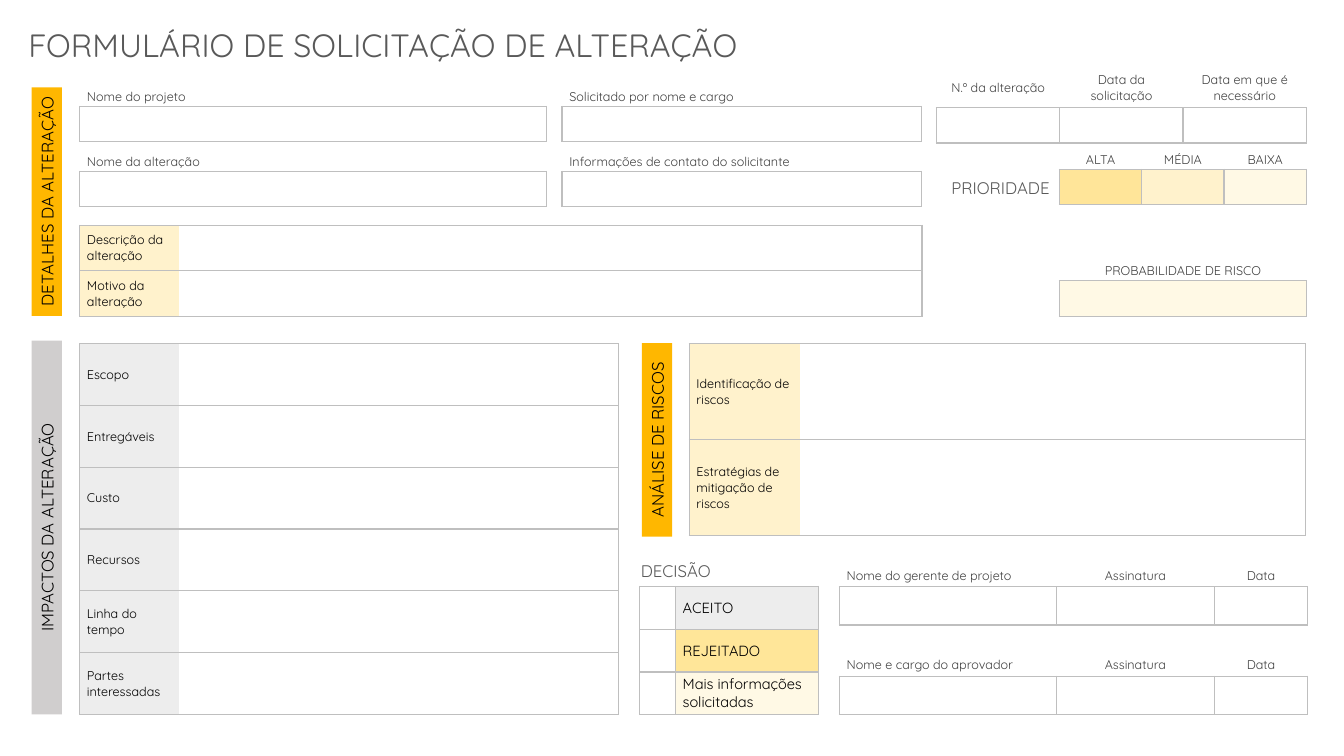
"""Builds a one-slide change request form."""
import lxml.etree
import pptx
import pptx.dml.color
import pptx.enum.shapes
import pptx.enum.text
import pptx.oxml.ns
import pptx.util

Pt = pptx.util.Pt
RGBColor = pptx.dml.color.RGBColor
PP_ALIGN = pptx.enum.text.PP_ALIGN
MSO_ANCHOR = pptx.enum.text.MSO_ANCHOR

FONT = "Quicksand"
BLACK = RGBColor(0x00, 0x00, 0x00)
WHITE = RGBColor(0xFF, 0xFF, 0xFF)
DARK = RGBColor(0x40, 0x40, 0x40)
GRAY = RGBColor(0x59, 0x59, 0x59)
BORDER = RGBColor(0xBF, 0xBF, 0xBF)
AMBER = RGBColor(0xFF, 0xB7, 0x00)
SILVER = RGBColor(0xD0, 0xCE, 0xCE)
PALE_GRAY = RGBColor(0xED, 0xED, 0xED)
GOLD = RGBColor(0xFF, 0xE5, 0x99)
REJECTED_GOLD = RGBColor(0xFF, 0xE6, 0x99)
CREAM = RGBColor(0xFF, 0xF2, 0xCC)
IVORY = RGBColor(0xFF, 0xF9, 0xE5)

LEFT, CENTER, RIGHT = PP_ALIGN.LEFT, PP_ALIGN.CENTER, PP_ALIGN.RIGHT
BAR_THICKNESS = 21.6
SIDES = {"l": "a:lnL", "r": "a:lnR", "t": "a:lnT", "b": "a:lnB"}

TITLE = "FORMULÁRIO DE SOLICITAÇÃO DE ALTERAÇÃO"
HEADINGS = [
    ("PRIORIDADE", 668.9, 121, 88, RIGHT),
    ("DECISÃO", 450.7, 394.6, 124.6, LEFT),
]
BARS = [
    ("DETALHES DA ALTERAÇÃO", 33.5, 144, 163.4, AMBER),
    ("IMPACTOS DA ALTERAÇÃO", 33.5, 376.8, 267.1, SILVER),
    ("ANÁLISE DE RISCOS", 469.4, 314.2, 138.2, AMBER),
]
SIGNATURE_COLUMNS = [("Assinatura", 113.2, CENTER, WHITE), ("Data", 66.3, CENTER, WHITE)]
FIELDS = [
    (56.9, 61.7, 14.4, 25.2, [("Nome do projeto", 333.6, LEFT, WHITE)]),
    (56.9, 108, 14.4, 25.2, [("Nome da alteração", 333.6, LEFT, WHITE)]),
    (401.5, 61.7, 14.4, 25.2, [("Solicitado por nome e cargo", 256.8, LEFT, WHITE)]),
    (401.5, 108, 14.4, 25.2, [("Informações de contato do solicitante", 256.8, LEFT, WHITE)]),
    (668.9, 51.5, 25.4, 25.2, [
        (label, 88.1, CENTER, WHITE)
        for label in ("N.º da alteração", "Data da solicitação", "Data em que é necessário")]),
    (756.7, 106.6, 14.4, 25.2, [
        (label, 58.8, CENTER, fill)
        for label, fill in (("ALTA", GOLD), ("MÉDIA", CREAM), ("BAIXA", IVORY))]),
    (756.7, 186.2, 14.4, 25.2, [("PROBABILIDADE DE RISCO", 176.4, CENTER, IVORY)]),
    (599.6, 403.3, 15.8, 27.4,
     [("Nome do gerente de projeto", 154.8, LEFT, WHITE)] + SIGNATURE_COLUMNS),
    (599.6, 467.2, 15.8, 27.4,
     [("Nome e cargo do aprovador", 154.8, LEFT, WHITE)] + SIGNATURE_COLUMNS),
]
SECTIONS = [
    (56.9, 245.5, (70.9, 314.1), 44.16, PALE_GRAY,
     ["Escopo", "Entregáveis", "Custo", "Recursos", "Linha do tempo", "Partes interessadas"]),
    (56.9, 161, (70.9, 530.8), 32.4, CREAM, ["Descrição da alteração", "Motivo da alteração"]),
    (492.3, 245.5, (79.5, 360.9), 68.6, CREAM,
     ["Identificação de riscos", "Estratégias de mitigação de riscos"]),
]
DECISIONS = [("ACEITO", PALE_GRAY), ("REJEITADO", REJECTED_GOLD),
             ("Mais informações solicitadas", IVORY)]


def set_text(frame, text, size, color, alignment, spacing=None):
    frame.word_wrap = True
    paragraph = frame.paragraphs[0]
    paragraph.text = text
    paragraph.alignment = alignment
    if spacing:
        paragraph.line_spacing = spacing
    paragraph.font.name = FONT
    paragraph.font.size = Pt(size)
    paragraph.font.bold = False
    paragraph.font.color.rgb = color


def set_borders(cell, sides):
    properties = cell._tc.get_or_add_tcPr()
    for index, (side, tag) in enumerate(SIDES.items()):
        line = lxml.etree.Element(pptx.oxml.ns.qn(tag), w=str(Pt(1)))
        if side in sides:
            fill = lxml.etree.SubElement(line, pptx.oxml.ns.qn("a:solidFill"))
            lxml.etree.SubElement(fill, pptx.oxml.ns.qn("a:srgbClr"), val=str(BORDER))
        else:
            lxml.etree.SubElement(line, pptx.oxml.ns.qn("a:noFill"))
        properties.insert(index, line)


def make_cell(text="", fill=WHITE, sides="lrtb", size=9, color=BLACK, alignment=LEFT, bottom=0):
    return dict(text=text, fill=fill, sides=sides, size=size, color=color,
                alignment=alignment, bottom=bottom)


def add_grid(slide, left, top, widths, heights, rows):
    table = slide.shapes.add_table(len(heights), len(widths), Pt(left), Pt(top),
                                   Pt(sum(widths)), Pt(sum(heights))).table
    table.first_row = False
    table.horz_banding = False
    for column, width in zip(table.columns, widths):
        column.width = Pt(width)
    for row, height, contents in zip(table.rows, heights, rows):
        row.height = Pt(height)
        for cell, content in zip(row.cells, contents):
            cell.margin_left = cell.margin_right = Pt(5.2)
            cell.margin_top = 0
            cell.margin_bottom = Pt(content["bottom"])
            cell.vertical_anchor = MSO_ANCHOR.MIDDLE
            if content["fill"] is None:
                cell.fill.background()
            else:
                cell.fill.solid()
                cell.fill.fore_color.rgb = content["fill"]
            set_borders(cell, content["sides"])
            set_text(cell.text_frame, content["text"], content["size"],
                     content["color"], content["alignment"])


def add_bar(slide, text, center_x, center_y, length, fill):
    bar = slide.shapes.add_shape(
        pptx.enum.shapes.MSO_SHAPE.RECTANGLE, Pt(center_x - length / 2),
        Pt(center_y - BAR_THICKNESS / 2), Pt(length), Pt(BAR_THICKNESS))
    bar.rotation = 270
    bar.shadow.inherit = False
    bar.fill.solid()
    bar.fill.fore_color.rgb = fill
    bar.line.fill.background()
    frame = bar.text_frame
    frame.margin_left = frame.margin_right = frame.margin_top = frame.margin_bottom = 0
    frame.vertical_anchor = MSO_ANCHOR.MIDDLE
    set_text(frame, text, 12, BLACK, CENTER)


def main():
    presentation = pptx.Presentation()
    presentation.slide_width, presentation.slide_height = Pt(960), Pt(540)
    slide = presentation.slides.add_slide(presentation.slide_layouts[5])

    title = slide.shapes.title
    title.left, title.top, title.width, title.height = Pt(13), Pt(14.4), Pt(657.4), Pt(36)
    title.text_frame.auto_size = pptx.enum.text.MSO_AUTO_SIZE.NONE
    title.text_frame.vertical_anchor = MSO_ANCHOR.TOP
    set_text(title.text_frame, TITLE, 23, GRAY, LEFT)

    for text, left, top, width, alignment in HEADINGS:
        box = slide.shapes.add_textbox(Pt(left), Pt(top), Pt(width), Pt(22.3))
        set_text(box.text_frame, text, 12, GRAY, alignment, 1.15)

    for bar in BARS:
        add_bar(slide, *bar)

    for left, top, label_height, box_height, columns in FIELDS:
        bottom = 2.9 if label_height > 20 else 0
        labels = [make_cell(label, None, "b", color=DARK, alignment=alignment, bottom=bottom)
                  for label, width, alignment, fill in columns]
        boxes = [make_cell(fill=fill) for label, width, alignment, fill in columns]
        widths = [width for label, width, alignment, fill in columns]
        add_grid(slide, left, top, widths, (label_height, box_height), (labels, boxes))

    for left, top, widths, height, fill, labels in SECTIONS:
        rows = [(make_cell(label, fill, "ltb"), make_cell(sides="rtb")) for label in labels]
        add_grid(slide, left, top, widths, [height] * len(labels), rows)

    decisions = [(make_cell(), make_cell(text, fill, size=10.5)) for text, fill in DECISIONS]
    add_grid(slide, 457, 419, (25.5, 102.2), [30.5] * len(decisions), decisions)

    presentation.save("out.pptx")


if __name__ == "__main__":
    main()
